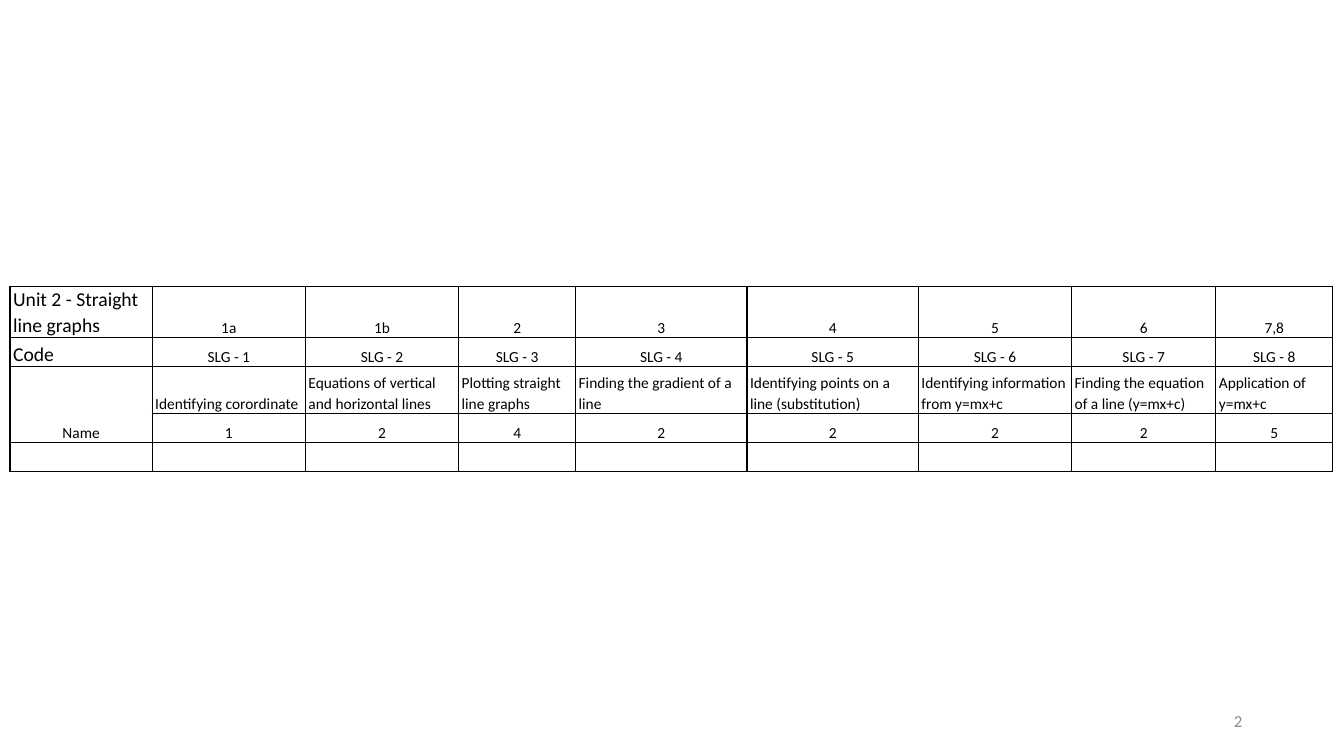
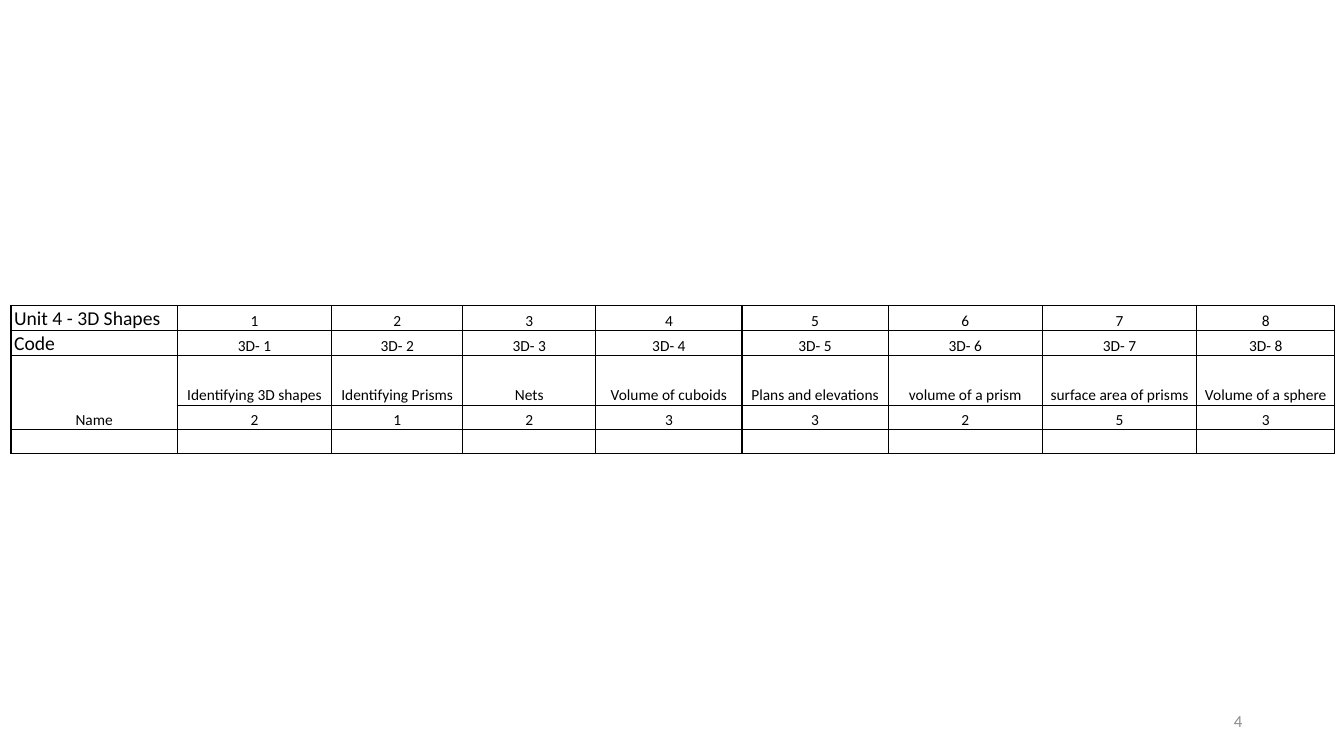
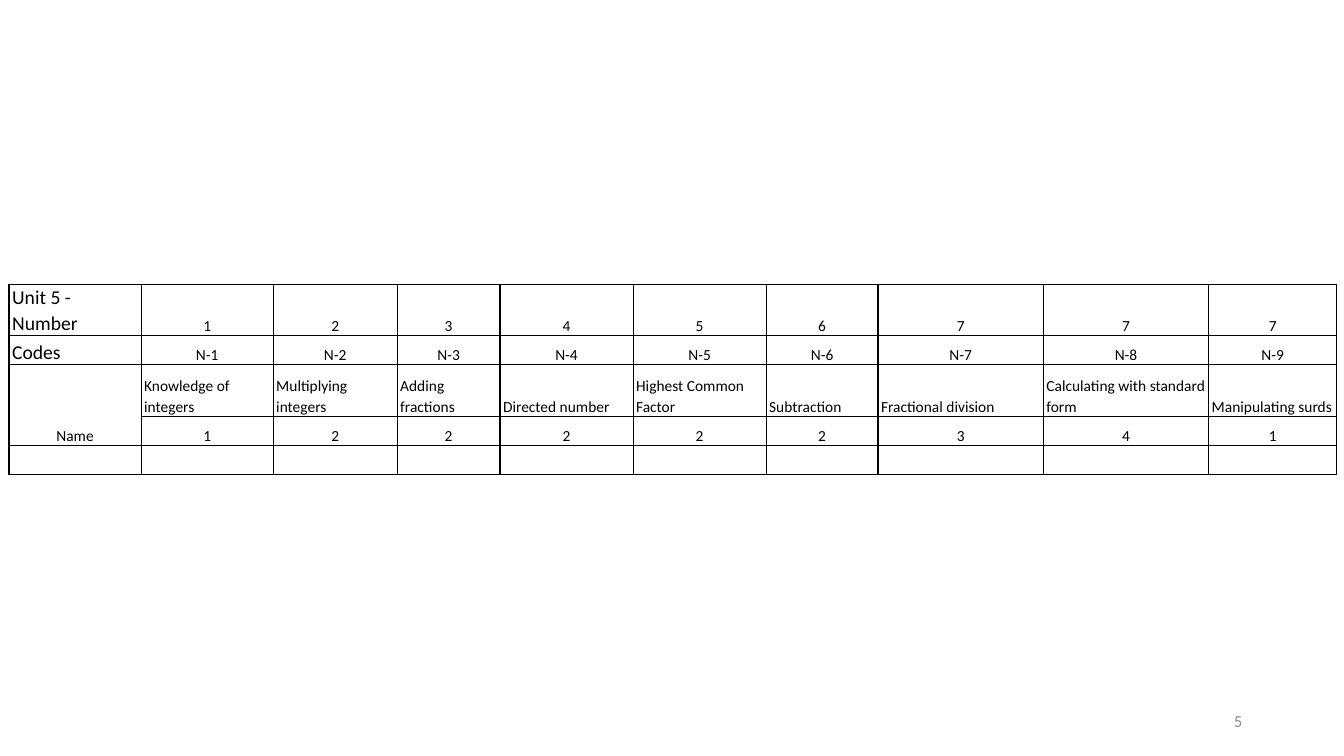
"""Build three slides, each with a unit grid of topic codes and marks."""
import lxml.etree
import pptx
import pptx.dml.color
import pptx.enum.text
import pptx.oxml.ns
import pptx.util

HUES = {"ink": "000000", "page": "8C8C8C"}
FONT = "Calibri"
SMALL, LARGE = 11, 14
LEAD = 1.07
PAD = 0.03
Inches = pptx.util.Inches
ALIGN = pptx.enum.text.PP_ALIGN
ANCHOR = pptx.enum.text.MSO_ANCHOR
qn = pptx.oxml.ns.qn

UNITS = [
    {
        "page": "2",
        "at": (0.1, 2.84),
        "cols": [1.41, 1.52, 1.52, 1.16, 1.7, 1.7, 1.52, 1.43, 1.16],
        "rows": [0.51, 0.29, 0.46, 0.29, 0.29],
        "unit": "Unit 2 - Straight line graphs",
        "code": "Code",
        "stem": "SLG - ",
        "align": ALIGN.LEFT,
        "topics": [
            ("1a", "Identifying corordinate", "1"),
            ("1b", "Equations of vertical and horizontal lines", "2"),
            ("2", "Plotting straight line graphs", "4"),
            ("3", "Finding the gradient of a line", "2"),
            ("4", "Identifying points on a line (substitution)", "2"),
            ("5", "Identifying information from y=mx+c", "2"),
            ("6", "Finding the equation of a line (y=mx+c)", "2"),
            ("7,8", "Application of y=mx+c", "5"),
        ],
    },
    {
        "page": "4",
        "at": (0.11, 3.03),
        "cols": [1.65, 1.53, 1.3, 1.32, 1.45, 1.45, 1.53, 1.53, 1.37],
        "rows": [0.25, 0.25, 0.49, 0.24, 0.24],
        "unit": "Unit 4 - 3D Shapes",
        "code": "Code",
        "stem": "3D- ",
        "align": ALIGN.CENTER,
        "topics": [
            ("1", "Identifying 3D shapes", "2"),
            ("2", "Identifying Prisms", "1"),
            ("3", "Nets", "2"),
            ("4", "Volume of cuboids", "3"),
            ("5", "Plans and elevations", "3"),
            ("6", "volume of a prism", "2"),
            ("7", "surface area of prisms", "5"),
            ("8", "Volume of a sphere", "3"),
        ],
    },
    {
        "page": "5",
        "at": (0.09, 2.82),
        "cols": [1.31, 1.31, 1.23, 1.02, 1.32, 1.32, 1.11, 1.64, 1.64, 1.27],
        "rows": [0.51, 0.29, 0.51, 0.29, 0.29],
        "unit": "Unit 5 - Number",
        "code": "Codes",
        "stem": "N-",
        "align": ALIGN.LEFT,
        "topics": [
            ("1", "Knowledge of integers", "1"),
            ("2", "Multiplying integers", "2"),
            ("3", "Adding fractions", "2"),
            ("4", "Directed number", "2"),
            ("5", "Highest Common Factor", "2"),
            ("6", "Subtraction", "2"),
            ("7", "Fractional division", "3"),
            ("7", "Calculating with standard form", "4"),
            ("7", "Manipulating surds", "1"),
        ],
    },
]


def write(para, text, size, hue, align):
    """Add one styled run to a paragraph."""
    para.alignment = align
    run = para.add_run()
    run.text = text
    run.font.name = FONT
    run.font.size = pptx.util.Pt(size)
    run.font.color.rgb = pptx.dml.color.RGBColor.from_string(HUES[hue])


def frame(cell):
    """Give a cell thin borders, no fill, tight margins and low text."""
    props = cell._tc.get_or_add_tcPr()
    for side in ("a:lnL", "a:lnR", "a:lnT", "a:lnB"):
        line = lxml.etree.SubElement(props, qn(side), w=str(pptx.util.Pt(1)))
        fill = lxml.etree.SubElement(line, qn("a:solidFill"))
        lxml.etree.SubElement(fill, qn("a:srgbClr"), val=HUES["ink"])
    cell.fill.background()
    cell.margin_left = cell.margin_right = Inches(PAD)
    cell.margin_top = cell.margin_bottom = 0
    cell.vertical_anchor = ANCHOR.BOTTOM


def fill_cell(cell, text, size, align):
    """Frame a cell and write its text, or size its empty line."""
    frame(cell)
    para = cell.text_frame.paragraphs[0]
    if text:
        para.line_spacing = LEAD
        write(para, text, size, "ink", align)
    else:
        lxml.etree.SubElement(para._p, qn("a:endParaRPr"), sz=str(size * 100))


def list_rows(unit):
    """Return the five rows of text for a unit."""
    marks, names, scores = zip(*unit["topics"])
    codes = [f"{unit['stem']}{n}" for n in range(1, len(marks) + 1)]
    return [
        [unit["unit"], *marks],
        [unit["code"], *codes],
        ["Name", *names],
        ["", *scores],
        [""] * len(unit["cols"]),
    ]


def add_grid(slide, unit, left, top):
    """Place the unit table with its top left corner at the given point."""
    cols, rows = unit["cols"], unit["rows"]
    shape = slide.shapes.add_table(
        len(rows), len(cols), Inches(left), Inches(top),
        Inches(sum(cols)), Inches(sum(rows)))
    grid = shape.table
    grid.first_row = grid.horz_banding = False
    for col, width in zip(grid.columns, cols):
        col.width = Inches(width)
    for row, height in zip(grid.rows, rows):
        row.height = Inches(height)
    for r, texts in enumerate(list_rows(unit)):
        for c, text in enumerate(texts):
            head = c == 0 and r < 2
            size = LARGE if head else SMALL
            align = ALIGN.LEFT if head else ALIGN.CENTER
            if r == 2 and c > 0:
                align = unit["align"]
            fill_cell(grid.cell(r, c), text, size, align)
    grid.cell(2, 0).merge(grid.cell(3, 0))


def add_page(slide, text, left, top, width, height):
    """Place the page number in the given box."""
    box = slide.shapes.add_textbox(
        Inches(left), Inches(top), Inches(width), Inches(height))
    body = box.text_frame
    body.word_wrap = True
    body.vertical_anchor = ANCHOR.MIDDLE
    write(body.paragraphs[0], text, 12, "page", ALIGN.RIGHT)


def main():
    """Build and save the deck."""
    deck = pptx.Presentation()
    deck.slide_width, deck.slide_height = Inches(13.33), Inches(7.5)
    for unit in UNITS:
        slide = deck.slides.add_slide(deck.slide_layouts[6])
        add_page(slide, unit["page"], 9.42, 6.95, 3, 0.4)
        add_grid(slide, unit, *unit["at"])
    deck.save("out.pptx")


if __name__ == "__main__":
    main()
